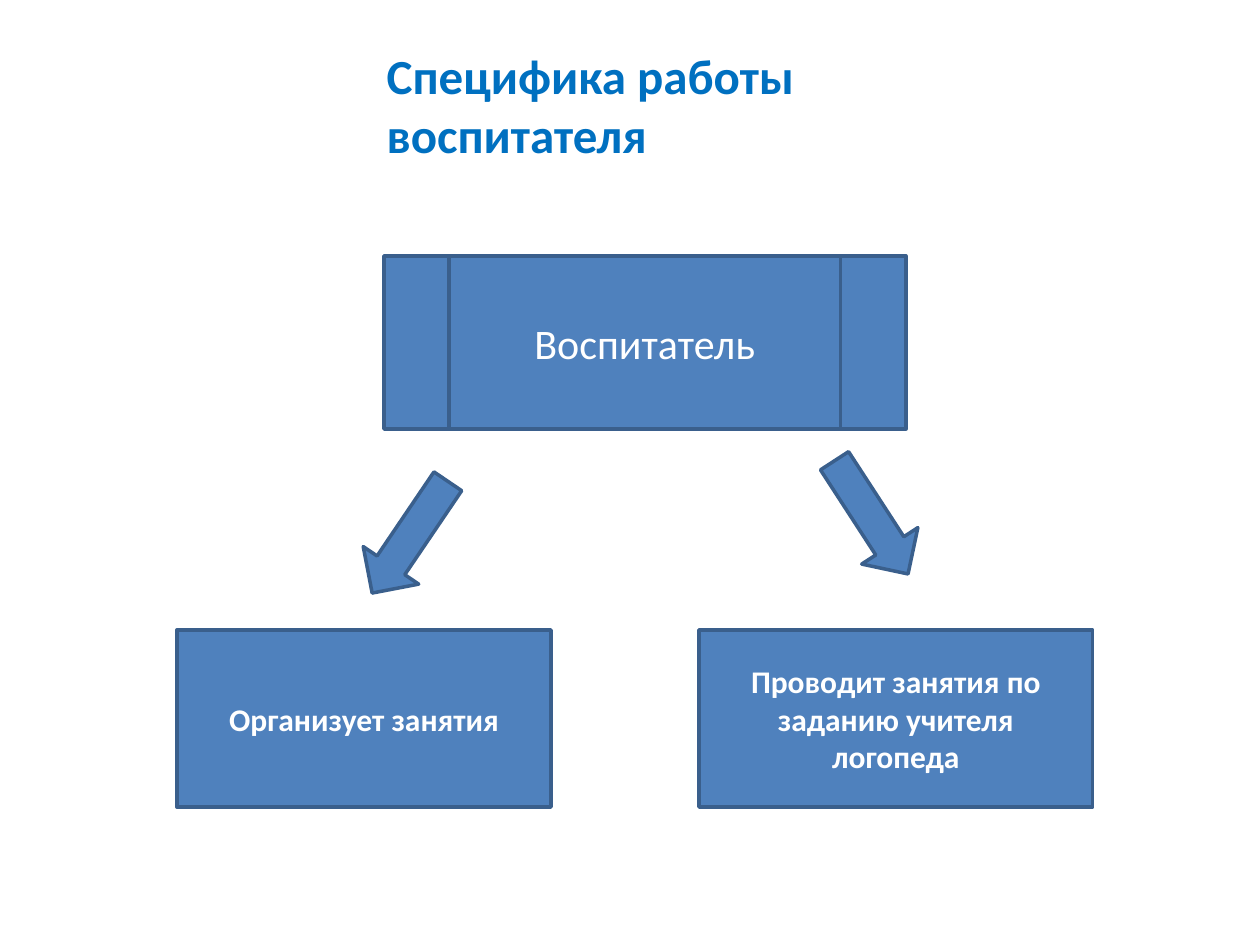
"""Build a slide showing how the educator's work splits into two duties."""
from pptx import Presentation
from pptx.dml.color import RGBColor
from pptx.enum.shapes import MSO_SHAPE as Shape
from pptx.enum.text import MSO_ANCHOR as Anchor, MSO_AUTO_SIZE as AutoSize, PP_ALIGN as Align
from pptx.util import Cm, Pt

COLORS = {"title": "0070C0", "fill": "4F81BD", "line": "3A5F8C", "text": "FFFFFF"}


def style_text(frame, text, size, bold, color, align, anchor):
    frame.text = text
    frame.word_wrap = True
    frame.vertical_anchor = anchor
    paragraph = frame.paragraphs[0]
    paragraph.alignment = align
    font = paragraph.font
    font.name, font.size, font.bold = "Calibri", Pt(size), bold
    font.color.rgb = RGBColor.from_string(COLORS[color])


def add_block(slide, kind, left, top, width, height):
    block = slide.shapes.add_shape(kind, Cm(left), Cm(top), Cm(width), Cm(height))
    block.shadow.inherit = False
    block.fill.solid()
    block.fill.fore_color.rgb = RGBColor.from_string(COLORS["fill"])
    block.line.color.rgb = RGBColor.from_string(COLORS["line"])
    block.line.width = Pt(2)
    return block


deck = Presentation()
deck.slide_width, deck.slide_height = Cm(25.4), Cm(19.05)
slide = deck.slides.add_slide(deck.slide_layouts[5])

heading = slide.shapes.title
heading.left, heading.top, heading.width, heading.height = Cm(7.54), Cm(0.79), Cm(13.49), Cm(2.64)
style_text(heading.text_frame, "Специфика работы воспитателя", 28, True, "title", Align.LEFT, Anchor.TOP)
heading.text_frame.auto_size = AutoSize.NONE

roles = [
    (Shape.FLOWCHART_PREDEFINED_PROCESS, 7.74, 5.16, 10.52, 3.49, "Воспитатель", 24, False),
    (Shape.RECTANGLE, 3.57, 12.7, 7.54, 3.57, "Организует занятия", 18, True),
    (Shape.RECTANGLE, 14.09, 12.7, 7.94, 3.57, "Проводит занятия по заданию учителя логопеда", 18, True),
]
for kind, left, top, width, height, wording, size, bold in roles:
    role = add_block(slide, kind, left, top, width, height)
    style_text(role.text_frame, wording, size, bold, "text", Align.CENTER, Anchor.MIDDLE)

for left, top, angle in [(16.89, 9.07, 327), (7.59, 9.47, 34.1)]:
    arrow = add_block(slide, Shape.DOWN_ARROW, left, top, 1.35, 2.72)
    arrow.rotation = angle

deck.save("out.pptx")
